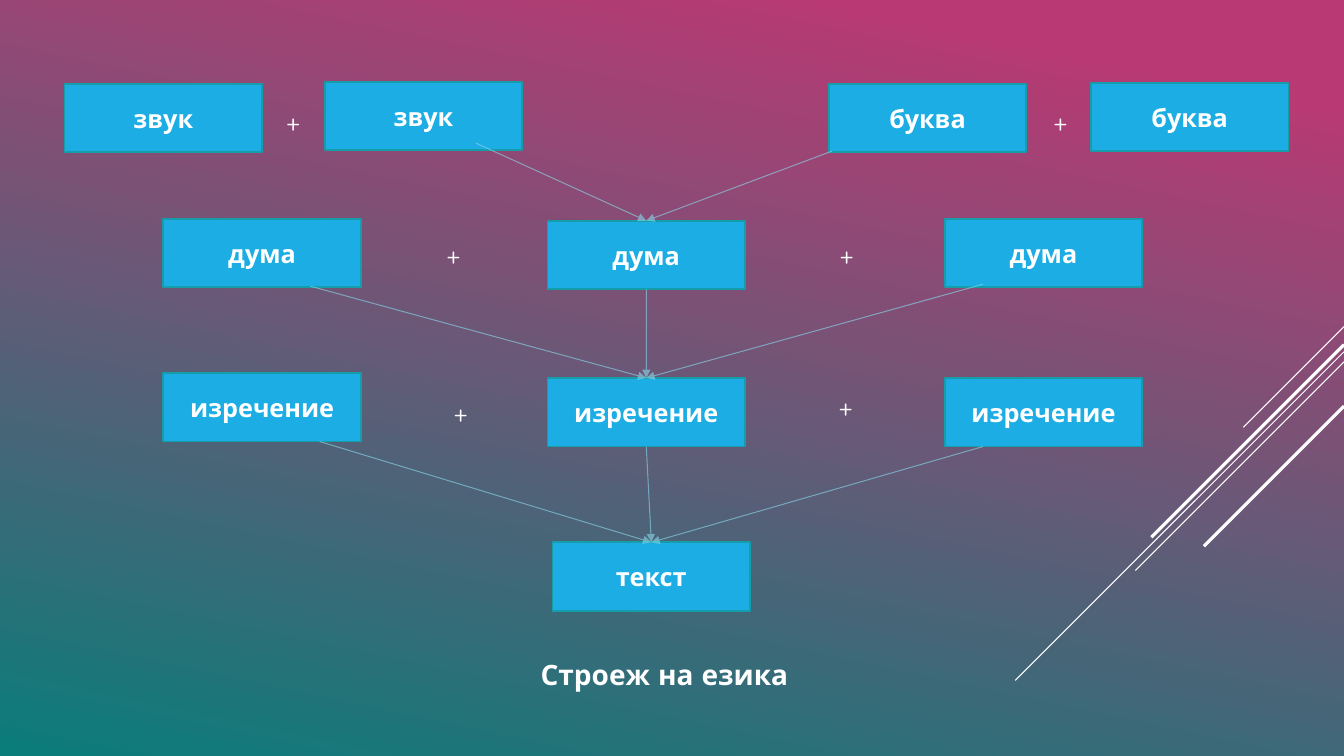
import collections
import dataclasses

import lxml.etree
import pptx
import pptx.dml.color
import pptx.enum.shapes
import pptx.enum.text
import pptx.oxml
import pptx.oxml.ns
import pptx.util

PX = 9144
NODE_SIZE = (196, 68)
Box = collections.namedtuple("Box", "left top width height")


@dataclasses.dataclass(frozen=True)
class Theme:
    """Colours, font and sizes of the slide."""

    font: str = "Quicksand"
    text: str = "FFFFFF"
    sky: str = "B93974"
    ground: str = "0A7D7A"
    node: str = "1CADE4"
    border: str = "159DA9"
    arrow: str = "8AD9EB"
    arrow_opacity: int = 60
    node_size: int = 18
    title_size: int = 20
    border_width: float = 1.25
    thin: float = 0.75
    thick: float = 2.25


THEME = Theme()


def px(*lengths):
    """Turn px lengths into EMU."""
    return [pptx.util.Emu(length * PX) for length in lengths]


def rgb(code):
    """Return the colour of a hex code."""
    return pptx.dml.color.RGBColor.from_string(code)


def write(frame, words, size, bold, align):
    """Put one formatted run into a text frame."""
    para = frame.paragraphs[0]
    para.alignment = align
    span = para.add_run()
    span.text = words
    span.font.name = THEME.font
    span.font.size = pptx.util.Pt(size)
    span.font.bold = bold
    span.font.color.rgb = rgb(THEME.text)


def add_line(page, start, end, colour, width):
    """Draw a straight line without shadow."""
    line = page.shapes.add_connector(
        pptx.enum.shapes.MSO_CONNECTOR.STRAIGHT, *px(*start, *end))
    line.line.color.rgb = rgb(colour)
    line.line.width = pptx.util.Pt(width)
    lxml.etree.SubElement(line._element.spPr, pptx.oxml.ns.qn("a:effectLst"))
    return line


def add_node(page, words, left, top):
    """Draw one labelled unit of language."""
    node = page.shapes.add_shape(
        pptx.enum.shapes.MSO_SHAPE.RECTANGLE, *px(left, top, *NODE_SIZE))
    node.shadow.inherit = False
    node.fill.solid()
    node.fill.fore_color.rgb = rgb(THEME.node)
    node.line.color.rgb = rgb(THEME.border)
    node.line.width = pptx.util.Pt(THEME.border_width)
    frame = node.text_frame
    frame.word_wrap = True
    frame.vertical_anchor = pptx.enum.text.MSO_ANCHOR.MIDDLE
    write(frame, words, THEME.node_size, True, pptx.enum.text.PP_ALIGN.CENTER)
    return node


def add_plus(page, left, top):
    """Write a plus sign between two units."""
    sign = page.shapes.add_textbox(*px(left, top, 57, 40))
    sign.text_frame.word_wrap = True
    write(sign.text_frame, "+", THEME.node_size, False, pptx.enum.text.PP_ALIGN.LEFT)


def add_level(page, box, units, pluses=()):
    """Place the units and plus signs of one level within its box."""
    for left, top in pluses:
        add_plus(page, box.left + left, box.top + top)
    return [add_node(page, words, box.left + left, box.top + top)
            for words, left, top in units]


def add_arrow(page, source, target, offset=None):
    """Point from a spot on the source to the top centre of the target."""
    left, top = offset or (0, 0)
    start = (source.left // PX + left, source.top // PX + top)
    arrow = add_line(page, start, start, THEME.arrow, THEME.thin)
    if offset is None:
        arrow.begin_connect(source, 2)
    arrow.end_connect(target, 0)
    outline = arrow.line._get_or_add_ln()
    colour = outline.find(".//" + pptx.oxml.ns.qn("a:srgbClr"))
    lxml.etree.SubElement(colour, pptx.oxml.ns.qn("a:alpha"),
                          val=str(THEME.arrow_opacity * 1000))
    lxml.etree.SubElement(outline, pptx.oxml.ns.qn("a:tailEnd"), type="triangle")


def add_background(page):
    """Fill the page with the slanted gradient."""
    fill = page.background.fill
    fill.gradient()
    fill.gradient_angle = 258
    stops = ((0.1, THEME.sky), (1, THEME.ground))
    for stop, (position, colour) in zip(fill.gradient_stops, stops):
        stop.position = position
        stop.color.rgb = rgb(colour)


def add_rays(page, box):
    """Draw the diagonal rays that leave the right edge of the box."""
    right = box.left + box.width
    rays = ((0, 100, THEME.thin), (25, 326, THEME.thin), (35, 207, THEME.thin),
            (18, 191, THEME.thick), (79, 139, THEME.thick))
    for drop, reach, width in rays:
        top = box.top + drop
        add_line(page, (right, top), (right - reach, top + reach), THEME.text, width)


def add_title(page, box):
    """Set the title placeholder into the box."""
    title = page.shapes.title
    title.left, title.top, title.width, title.height = px(*box)
    frame = title.text_frame
    frame.word_wrap = True
    frame.auto_size = pptx.enum.text.MSO_AUTO_SIZE.NONE
    frame.vertical_anchor = pptx.enum.text.MSO_ANCHOR.TOP
    write(frame, "Строеж на езика", THEME.title_size, True,
          pptx.enum.text.PP_ALIGN.CENTER)


def add_diagram(page, box):
    """Build the levels from sounds to text and link them."""
    def level(left, top, width, height):
        return Box(box.left + left, box.top + top, width, height)

    sounds = add_level(page, level(0, 0, 454, 70),
                       [("звук", 0, 2), ("звук", 258, 0)], [(210, 20)])
    letters = add_level(page, level(758, 1, 456, 69),
                        [("буква", 0, 1), ("буква", 260, 0)], [(213, 19)])
    words = add_level(page, level(98, 136, 971, 70),
                      [("дума", 0, 0), ("дума", 381, 2), ("дума", 775, 0)],
                      [(271, 16), (661, 16)])
    sentences = add_level(
        page, level(98, 289, 971, 73),
        [("изречение", 0, 0), ("изречение", 381, 5), ("изречение", 775, 5)],
        [(278, 19), (660, 13)])
    text, = add_level(page, level(484, 457, *NODE_SIZE), [("текст", 0, 0)])

    add_arrow(page, sounds[1], words[1], (150, 61))
    add_arrow(page, letters[0], words[1], (3, 67))
    for units, target, starts in (
            (words, sentences[1], ((146, 67), None, (38, 65))),
            (sentences, text, ((155, 68), None, (38, 68)))):
        for unit, start in zip(units, starts):
            add_arrow(page, unit, target, start)


def main():
    """Build and save the deck."""
    deck = pptx.Presentation()
    deck.slide_width, deck.slide_height = px(1333, 750)
    page = deck.slides.add_slide(deck.slide_layouts.get_by_name("Title Only"))
    add_background(page)
    add_rays(page, Box(1007, 324, 326, 351))
    add_diagram(page, Box(64, 81, 1214, 525))
    add_title(page, Box(399, 647, 520, 44))
    deck.save("out.pptx")


if __name__ == "__main__":
    main()
